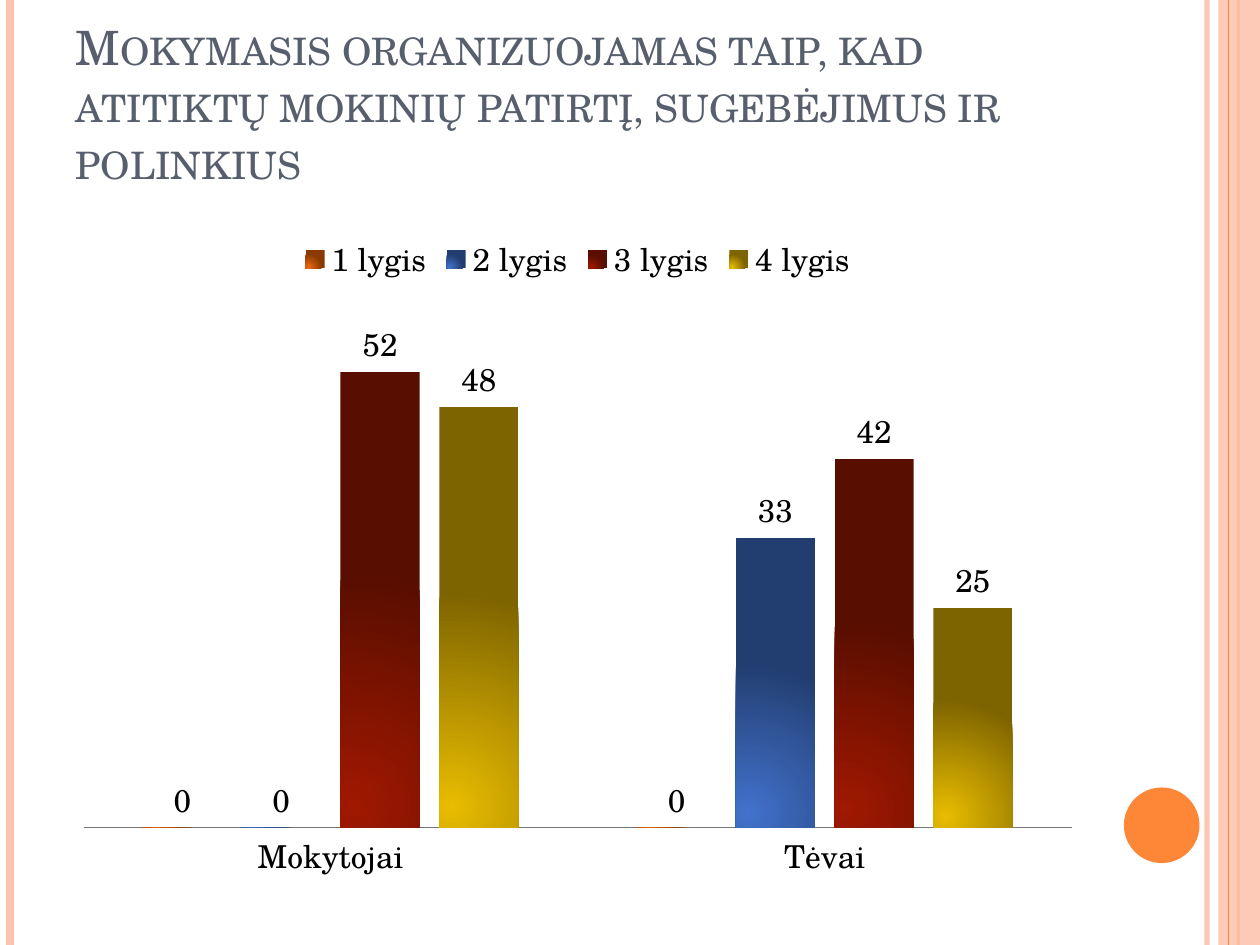
from dataclasses import dataclass

from lxml.etree import SubElement
from pptx import Presentation
from pptx.chart.data import CategoryChartData
from pptx.dml.color import RGBColor
from pptx.enum.chart import XL_CHART_TYPE, XL_LABEL_POSITION, XL_LEGEND_POSITION, XL_TICK_MARK
from pptx.enum.shapes import MSO_CONNECTOR, MSO_SHAPE
from pptx.enum.text import MSO_ANCHOR, MSO_AUTO_SIZE, PP_ALIGN
from pptx.oxml import parse_xml
from pptx.oxml.ns import nsdecls, qn
from pptx.util import Inches, Pt


@dataclass(frozen=True)
class Theme:
    font: str = "TeX Gyre Schola"
    title_size: int = 27
    chart_size: int = 18
    title: str = "575F6D"
    text: str = "000000"
    axis: str = "777777"
    peach: str = "FEC3AE"
    orange: str = "FE8637"


THEME = Theme()
CATEGORIES = ["Mokytojai", "Tėvai"]
# Series name, values, bright and dark ends of the bar gradient
SERIES = [
    ("1 lygis", (0, 0), "F06A10", "8A3A00"),
    ("2 lygis", (0, 33), "4272CC", "223E70"),
    ("3 lygis", (52, 42), "A01800", "580E00"),
    ("4 lygis", (48, 25), "E8BC00", "7E6400"),
]


def rgb(value):
    return RGBColor.from_string(value)


def set_alpha(fill_parent, percent):
    color = next(fill_parent.iter(qn("a:srgbClr")))
    SubElement(color, qn("a:alpha")).set("val", str(percent * 1000))


def add_rule(s, x, height, color, width, alpha=None):
    """Draw a vertical line from the top of the slide."""
    line = s.shapes.add_connector(
        MSO_CONNECTOR.STRAIGHT, Inches(x), 0, Inches(x), Inches(height))
    line.line.color.rgb = rgb(color)
    line.line.width = Pt(width)
    if alpha:
        set_alpha(line.line._get_or_add_ln(), alpha)
    SubElement(line._element.spPr, qn("a:effectLst"))


def add_solid(s, kind, box, color, alpha=None):
    sp = s.shapes.add_shape(kind, *map(Inches, box))
    sp.shadow.inherit = False
    sp.fill.solid()
    sp.fill.fore_color.rgb = rgb(color)
    sp.line.fill.background()
    if alpha:
        set_alpha(sp._element.spPr, alpha)


def add_border(s, width, height):
    """Draw the stripes at both slide edges and the disc beside the right one."""
    add_rule(s, width - 0.42, height, THEME.peach, 3, 93)
    add_rule(s, 0.08, height, THEME.peach, 4.5)
    add_rule(s, width - 0.17, height, THEME.orange, 1.5)
    add_solid(s, MSO_SHAPE.RECTANGLE, (width - 0.33, 0, 0.33, height), THEME.peach, 87)
    add_rule(s, width - 0.25, height, THEME.orange, 0.75)
    add_solid(s, MSO_SHAPE.OVAL, (width - 1.08, height - 1.25, 0.6, 0.6), THEME.orange)


def place_title(s, box, text):
    title = s.shapes.title
    title.left, title.top, title.width, title.height = map(Inches, box)
    tf = title.text_frame
    tf.text = text
    tf.word_wrap = True
    tf.auto_size = MSO_AUTO_SIZE.NONE
    tf.vertical_anchor = MSO_ANCHOR.BOTTOM
    p = tf.paragraphs[0]
    p.alignment = PP_ALIGN.LEFT
    p.font.name = THEME.font
    p.font.size = Pt(THEME.title_size)
    p.font.color.rgb = rgb(THEME.title)
    p.runs[0].font._element.set("cap", "small")


def fill_radial(series, bright, dark):
    """Fill bars with a circular gradient centred near the lower left corner."""
    series.format.fill.solid()
    spPr = series.format.fill._xPr
    gradient = parse_xml(
        f'<a:gradFill {nsdecls("a")} rotWithShape="1"><a:gsLst>'
        f'<a:gs pos="0"><a:srgbClr val="{bright}"/></a:gs>'
        f'<a:gs pos="100000"><a:srgbClr val="{dark}"/></a:gs></a:gsLst>'
        '<a:path path="circle">'
        '<a:fillToRect l="15000" t="95000" r="85000" b="5000"/>'
        '</a:path></a:gradFill>')
    spPr.replace(spPr.find(qn("a:solidFill")), gradient)


def add_level_chart(s, box):
    data = CategoryChartData()
    data.categories = CATEGORIES
    for name, values, *_ in SERIES:
        data.add_series(name, values)
    chart = s.shapes.add_chart(
        XL_CHART_TYPE.COLUMN_CLUSTERED, *map(Inches, box), data).chart
    chart.has_title = False
    chart.font.name = THEME.font
    chart.font.size = Pt(THEME.chart_size)
    chart.font.color.rgb = rgb(THEME.text)
    chart.has_legend = True
    chart.legend.position = XL_LEGEND_POSITION.TOP
    chart.legend.include_in_layout = False

    cat_axis, val_axis = chart.category_axis, chart.value_axis
    cat_axis.major_tick_mark = XL_TICK_MARK.NONE
    cat_axis.format.line.color.rgb = rgb(THEME.axis)
    val_axis.minimum_scale, val_axis.maximum_scale = 0, 60
    val_axis.has_major_gridlines = False
    val_axis.visible = False

    plot = chart.plots[0]
    plot.vary_by_categories = False
    plot.gap_width, plot.overlap = 150, -25
    for series, (_, _, bright, dark) in zip(plot.series, SERIES):
        fill_radial(series, bright, dark)
        labels = series.data_labels
        labels.show_value = True
        labels.position = XL_LABEL_POSITION.OUTSIDE_END


def main():
    width, height = 10, 7.5
    prs = Presentation()
    prs.slide_width, prs.slide_height = Inches(width), Inches(height)
    s = prs.slides.add_slide(prs.slide_layouts[5])
    add_border(s, width, height)
    place_title(s, (0.5, 0.3, 8.17, 1.25),
                "Mokymasis organizuojamas taip, kad atitiktų mokinių patirtį, "
                "sugebėjimus ir polinkius")
    add_level_chart(s, (0.5, 1.75, 8.17, 5.33))
    prs.save("out.pptx")


if __name__ == "__main__":
    main()
